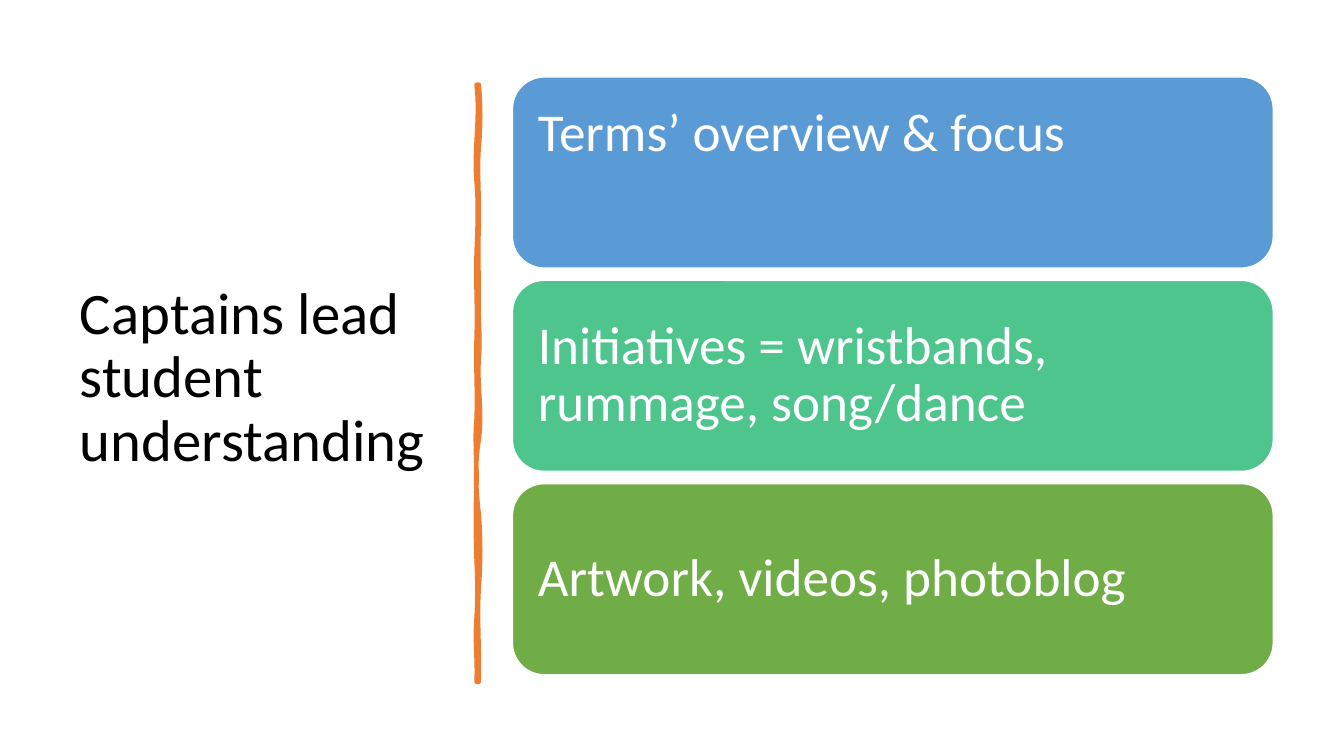
from lxml.etree import SubElement as Sub
from pptx import Presentation as Deck
from pptx.dml.color import RGBColor as Rgb
from pptx.enum.shapes import MSO_SHAPE as Kind
from pptx.enum.text import MSO_ANCHOR as Anchor, PP_ALIGN as Align
from pptx.oxml.ns import qn
from pptx.util import Pt

FONT = "Calibri"
WHITE, BLACK, ORANGE = "FFFFFF", "000000", "ED7D31"

# Cards: text, fill, room kept free below the text
CARDS = [
    ("Terms’ overview & focus", "5B9BD5", 55),
    ("Initiatives = wristbands, rummage, song/dance", "4DC58D", 0),
    ("Artwork, videos, photoblog", "70AD47", 0),
]
LEFT, TOP, WIDE, HIGH, STEP = 366, 55, 543.5, 136.5, 145.25

# Edges of the brush stroke: two sideways bends, then the y where the wave ends
HEAD, FOOT = 60.5, 487
DOWN = [(1.4, 1.4, 105), (-1.4, 0.7, 163), (-0.7, 0, 212), (-0.7, 1.4, 256),
        (-1.4, 2.9, 314), (-2.9, -2.2, 367), (1.4, 1.4, 420), (-1.4, 0.7, FOOT)]
UP = [(0.7, -1.4, 441), (0.7, 0.7, 401), (-0.7, -0.7, 343), (0, -1.4, 299),
      (0.7, -0.7, 241), (0.7, -0.7, 180), (0.7, 1.4, 130), (-2.2, 2.9, HEAD)]


def color(code):
    return Rgb.from_string(code)


def paint(shape, fill, line, width):
    shape.shadow.inherit = False
    shape.fill.solid()
    shape.fill.fore_color.rgb = color(fill)
    shape.line.color.rgb = color(line)
    shape.line.width = Pt(width)


def write(shape, text, size, ink, inset=(7.2, 3.6), below=0):
    frame = shape.text_frame
    frame.word_wrap = True
    frame.vertical_anchor = Anchor.MIDDLE
    side, edge = inset
    frame.margin_left = frame.margin_right = Pt(side)
    frame.margin_top = Pt(edge)
    frame.margin_bottom = Pt(edge + below)
    para = frame.paragraphs[0]
    para.alignment = Align.LEFT
    para.line_spacing = 0.9
    run = para.add_run()
    run.text = text
    run.font.name = FONT
    run.font.size = Pt(size)
    run.font.color.rgb = color(ink)


def wave(x, y, bends, parts=8):
    """Points along a chain of cubic curves that all end at x."""
    dots = []
    for one, two, end in bends:
        for i in range(1, parts + 1):
            t = i / parts
            shift = 3 * t * (1 - t) * ((1 - t) * one + t * two)
            dots.append((Pt(x + shift), Pt(y + (end - y) * t)))
        y = end
    return dots


def stroke(slide, right, left):
    pen = slide.shapes.build_freeform(Pt(right), Pt(HEAD))
    dots = wave(right, HEAD, DOWN) + [(Pt(left), Pt(FOOT))]
    pen.add_line_segments(dots + wave(left, FOOT, UP), close=True)
    shape = pen.convert_to_shape()
    paint(shape, ORANGE, ORANGE, 3.25)
    # Round joins
    Sub(shape.line._get_or_add_ln(), qn("a:round"))


def card(slide, top, text, fill, below):
    shape = slide.shapes.add_shape(
        Kind.ROUNDED_RECTANGLE, Pt(LEFT), Pt(top), Pt(WIDE), Pt(HIGH))
    paint(shape, fill, WHITE, 1)
    write(shape, text, 38, WHITE, inset=(11.5, 11.5), below=below)


def main():
    deck = Deck()
    deck.slide_width, deck.slide_height = Pt(960), Pt(540)
    slide = deck.slides.add_slide(deck.slide_layouts[6])

    # Title
    title = slide.shapes.add_textbox(Pt(50), Pt(50.5), Pt(269), Pt(440))
    write(title, "Captains lead student understanding", 42, BLACK)

    # Divider
    stroke(slide, 342, 340.5)

    # Cards
    for i, (text, fill, below) in enumerate(CARDS):
        card(slide, TOP + i * STEP, text, fill, below)

    deck.save("out.pptx")


if __name__ == "__main__":
    main()
